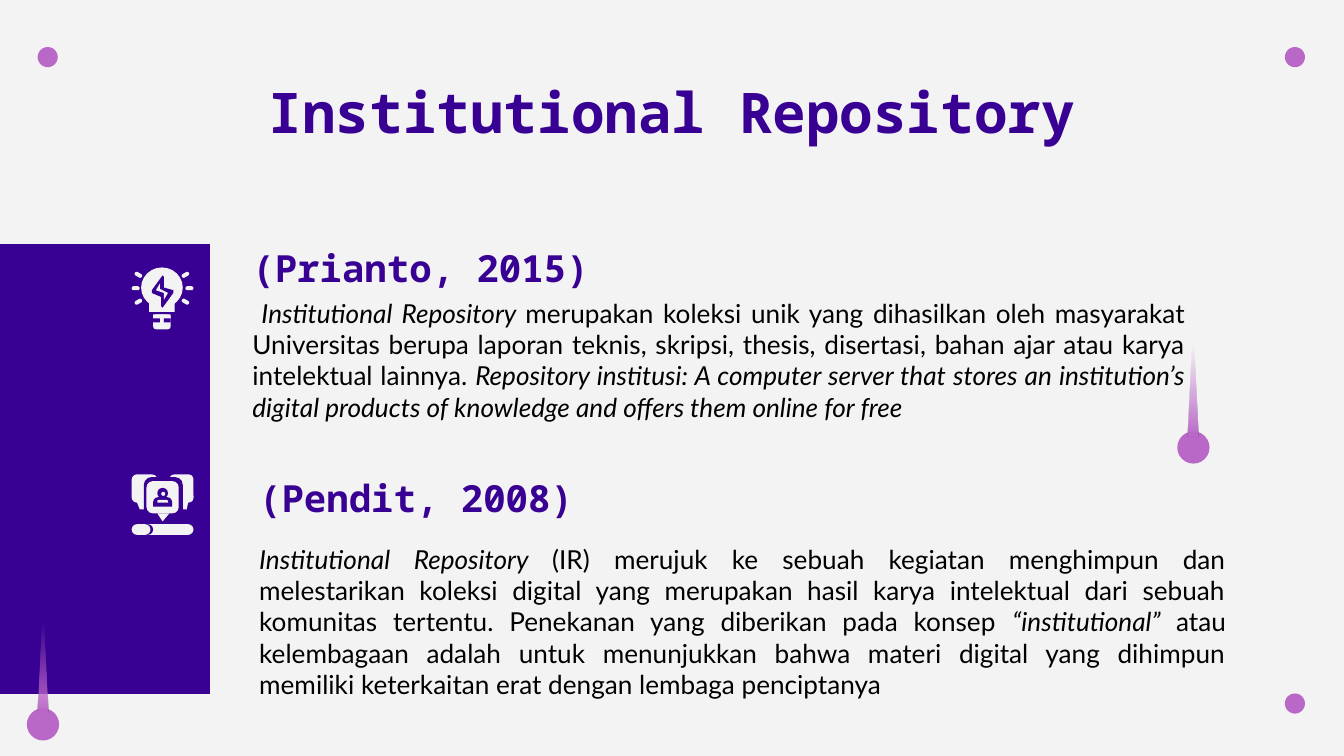
from lxml import etree
from pptx import Presentation
from pptx import util as u
from pptx.dml.color import RGBColor
from pptx.enum import shapes, text
from pptx.oxml.ns import qn

PURPLE = RGBColor(0x38, 0x00, 0x93)
ORCHID = RGBColor(0xBA, 0x68, 0xC8)
PALE = RGBColor(0xF3, 0xF3, 0xF3)
BLACK = RGBColor(0, 0, 0)
KIND = shapes.MSO_SHAPE
BOTTOM, TOP = text.MSO_ANCHOR.BOTTOM, text.MSO_ANCHOR.TOP
LEFT, CENTER, JUSTIFY = text.PP_ALIGN.LEFT, text.PP_ALIGN.CENTER, text.PP_ALIGN.JUSTIFY
WIDTH = 10
HEIGHT = WIDTH * 9 / 16

TITLE = ("Noto Sans Mono", 30, PURPLE, True)
HEADING = ("Noto Sans Mono", 20, PURPLE, True)
BODY = ("Lato", 14, BLACK, False)

TEXTS = [
    ((0.78, 0.59, 8.44, 0.59), TITLE, BOTTOM, CENTER, 0, 0,
     [("Institutional Repository", False)]),
    ((1.78, 1.8, 6.33, 0.46), HEADING, BOTTOM, LEFT, 0, 0, [("(Prianto, 2015)", False)]),
    ((1.28, 2.11, 7.64, 1.29), BODY, TOP, JUSTIFY, 0.5, -0.35, [
        ("\t Institutional Repository ", True),
        ("merupakan koleksi unik yang dihasilkan oleh masyarakat Universitas berupa "
         "laporan teknis, skripsi, thesis, disertasi, bahan ajar atau karya "
         "intelektual lainnya. ", False),
        ("Repository institusi: A computer server that stores an institution’s "
         "digital products of knowledge and offers them online for free", True)]),
    ((1.83, 3.51, 6.33, 0.46), HEADING, BOTTOM, LEFT, 0, 0, [("(Pendit, 2008)", False)]),
    ((1.83, 3.94, 7.39, 1.35), BODY, TOP, JUSTIFY, 0, 0, [
        ("Institutional Repository ", True),
        ("(IR) merujuk ke sebuah kegiatan menghimpun dan melestarikan koleksi digital "
         "yang merupakan hasil karya intelektual dari sebuah komunitas tertentu. "
         "Penekanan yang diberikan pada konsep ", False),
        ("“institutional” ", True),
        ("atau kelembagaan adalah untuk menunjukkan bahwa materi digital yang "
         "dihimpun memiliki keterkaitan erat dengan lembaga penciptanya", False)]),
]

DOT, DOT_X, DOT_Y = 0.15, 0.28, 0.35
PINS = [(8.76, 3.21), (0.2, 5.27)]

RAYS = [(0.98, 2.13, 0), (1.38, 2.13, 0), (1.35, 2.03, -30), (1.0, 2.23, -30),
        (1.35, 2.23, 30), (1.0, 2.03, 30)]
BULB = [
    (KIND.OVAL, (1.05, 1.99, 0.31, 0.3), PALE),
    (KIND.RECTANGLE, (1.11, 2.24, 0.19, 0.08), PALE),
    (KIND.ROUNDED_RECTANGLE, (1.14, 2.34, 0.13, 0.11), PALE),
    (KIND.RECTANGLE, (1.14, 2.34, 0.13, 0.03), PALE),
    (KIND.RECTANGLE, (1.14, 2.37, 0.05, 0.03), PURPLE),
    (KIND.RECTANGLE, (1.22, 2.37, 0.05, 0.03), PURPLE),
]
BOLT = [
    ([(1.21, 2.05), (1.22, 2.06), (1.22, 2.14), (1.29, 2.16), (1.29, 2.18),
      (1.21, 2.29), (1.2, 2.28), (1.2, 2.21), (1.13, 2.18), (1.13, 2.16)], PURPLE),
    ([(1.19, 2.11), (1.16, 2.16), (1.22, 2.18), (1.22, 2.23), (1.25, 2.18),
      (1.19, 2.15)], PALE),
]
BACK_TAILS = [
    ([(0.98, 3.68), (1.07, 3.68), (1.07, 3.79), (1.04, 3.79), (1.02, 3.74)], PALE),
    ([(1.44, 3.68), (1.36, 3.68), (1.36, 3.79), (1.39, 3.79), (1.4, 3.74)], PALE),
]
BACK_BUBBLES = [
    (KIND.ROUNDED_RECTANGLE, (0.98, 3.53, 0.19, 0.21), PALE),
    (KIND.ROUNDED_RECTANGLE, (1.26, 3.53, 0.18, 0.21), PALE),
]
FRONT_BUBBLE = [
    (KIND.ROUNDED_RECTANGLE, (1.07, 3.55, 0.29, 0.3), PURPLE),
    (KIND.ROUNDED_RECTANGLE, (1.09, 3.58, 0.24, 0.24), PALE),
    (KIND.OVAL, (1.17, 3.63, 0.08, 0.08), PURPLE),
    (KIND.ROUND_2_SAME_RECTANGLE, (1.14, 3.7, 0.14, 0.07), PURPLE),
    (KIND.OVAL, (1.2, 3.66, 0.03, 0.03), PALE),
    (KIND.ROUND_2_SAME_RECTANGLE, (1.17, 3.72, 0.08, 0.02), PALE),
    (KIND.ROUNDED_RECTANGLE, (1.06, 3.9, 0.38, 0.08), PALE),
    (KIND.ROUNDED_RECTANGLE, (0.98, 3.9, 0.16, 0.08), PURPLE),
    (KIND.ROUNDED_RECTANGLE, (0.98, 3.9, 0.14, 0.08), PALE),
]
POINTER = [([(1.17, 3.82), (1.26, 3.82), (1.21, 3.88)], PALE)]


def paint(sp, color):
    sp.shadow.inherit = False
    sp.fill.solid()
    sp.fill.fore_color.rgb = color
    sp.line.fill.background()
    return sp


def add_shape(s, kind, box, color, rotation=0):
    sp = paint(s.shapes.add_shape(kind, *map(u.Inches, box)), color)
    sp.rotation = rotation
    return sp


def add_shapes(s, parts):
    for kind, box, color in parts:
        sp = add_shape(s, kind, box, color)
        if kind == KIND.ROUNDED_RECTANGLE:
            sp.adjustments[0] = 0.5 if box[3] < 0.1 else 0.2
        elif kind == KIND.ROUND_2_SAME_RECTANGLE:
            sp.adjustments[0] = 0.5


def add_outlines(s, parts):
    for points, color in parts:
        start, *rest = [(u.Inches(x), u.Inches(y)) for x, y in points]
        fb = s.shapes.build_freeform(*start)
        fb.add_line_segments(rest, close=True)
        paint(fb.convert_to_shape(), color)


def add_text(s, box, style, anchor, align, margin, indent, runs):
    font, size, color, bold = style
    tf = s.shapes.add_textbox(*map(u.Inches, box)).text_frame
    tf.word_wrap = True
    tf.vertical_anchor = anchor
    tf.margin_left = tf.margin_right = tf.margin_top = tf.margin_bottom = u.Inches(0.1)
    p = tf.paragraphs[0]
    p.alignment = align
    pPr = p._p.get_or_add_pPr()
    pPr.set("marL", str(u.Inches(margin)))
    pPr.set("indent", str(u.Inches(indent)))
    for words, italic in runs:
        r = p.add_run()
        r.text = words
        r.font.name, r.font.size = font, u.Pt(size)
        r.font.color.rgb = color
        r.font.bold, r.font.italic = bold, italic


def add_pin(s, x, y):
    add_shape(s, KIND.OVAL, (x, y, 0.24, 0.24), ORCHID)
    tail = add_shape(s, KIND.ISOSCELES_TRIANGLE, (x + 0.08, y - 0.82, 0.08, 0.87), ORCHID)
    spPr = tail._element.spPr
    grad = etree.Element(qn("a:gradFill"))
    stops = etree.SubElement(grad, qn("a:gsLst"))
    for position, alpha in ((0, 100), (80, 0), (100, 0)):
        stop = etree.SubElement(stops, qn("a:gs"), pos=str(position * 1000))
        color = etree.SubElement(stop, qn("a:srgbClr"), val=str(ORCHID))
        etree.SubElement(color, qn("a:alpha"), val=str(alpha * 1000))
    etree.SubElement(grad, qn("a:lin"), ang=str(270 * 60000), scaled="0")
    spPr.replace(spPr.find(qn("a:solidFill")), grad)


def main():
    prs = Presentation()
    prs.slide_width, prs.slide_height = u.Inches(WIDTH), u.Inches(HEIGHT)
    s = prs.slides.add_slide(prs.slide_layouts[6])
    s.background.fill.solid()
    s.background.fill.fore_color.rgb = PALE

    right, bottom = 9.56, 5.16
    for x, y in ((DOT_X, DOT_Y), (right, bottom), (right, DOT_Y)):
        add_shape(s, KIND.OVAL, (x, y, DOT, DOT), ORCHID)
    for item in TEXTS:
        add_text(s, *item)

    panel = add_shape(s, KIND.RECTANGLE, (-0.15, 1.82, 1.71, 3.34), PURPLE)
    panel.line.color.rgb = PURPLE
    panel.line.width = u.Pt(0.75)

    for x, y, angle in RAYS:
        ray = add_shape(s, KIND.ROUNDED_RECTANGLE, (x, y, 0.06, 0.03), PALE, angle)
        ray.adjustments[0] = 0.5
    add_shapes(s, BULB)
    add_outlines(s, BOLT)
    add_outlines(s, BACK_TAILS)
    add_shapes(s, BACK_BUBBLES)
    add_shapes(s, FRONT_BUBBLE)
    add_outlines(s, POINTER)
    for x, y in PINS:
        add_pin(s, x, y)
    prs.save("out.pptx")


if __name__ == "__main__":
    main()
